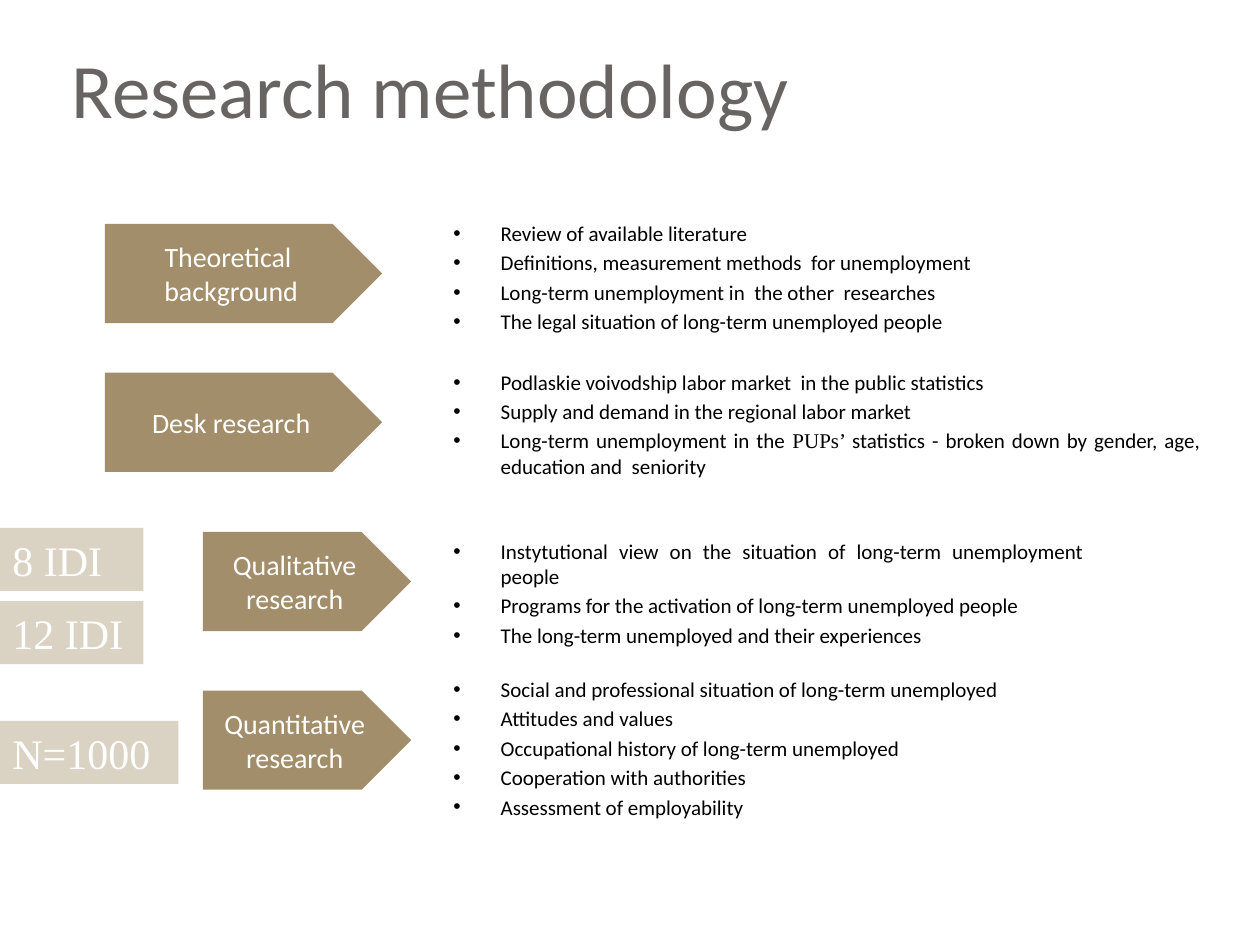
import dataclasses

import pptx
import pptx.dml.color
import pptx.enum.shapes
import pptx.enum.text
import pptx.oxml
import pptx.oxml.ns
import pptx.util

Pt = pptx.util.Pt
Shape = pptx.enum.shapes.MSO_SHAPE
Align = pptx.enum.text.PP_ALIGN
Anchor = pptx.enum.text.MSO_ANCHOR

HEX = {"title": "696464", "text": "000000", "light": "FFFFFF",
       "arrow": "A28E6A", "tag": "DAD2C3"}
SANS, SERIF = "Calibri", "Times New Roman"
SERIF_WORD = "PUPs’ "
LIST_LEFT, INDENT = 252, 27
ARROW_HIGH, TAG_HIGH = 56.7, 36


@dataclasses.dataclass
class Stage:
    label: str
    left: float
    top: float
    width: float
    list_top: float
    list_width: float
    list_high: float
    points: list[str]


@dataclasses.dataclass
class Tag:
    text: str
    top: float
    width: float


STAGES = [
    Stage("Theoretical \nbackground", 60, 128, 158.4, 122.4, 436, 80, [
        "Review of available literature",
        "Definitions, measurement methods  for unemployment",
        "Long-term unemployment in  the other  researches",
        "The legal situation of long-term unemployed people"]),
    Stage("Desk research", 60, 213, 158.4, 207.4, 445, 68, [
        "Podlaskie voivodship labor market  in the public statistics",
        "Supply and demand in the regional labor market",
        "Long-term unemployment in the PUPs’ statistics - broken down "
        "by gender, age,  education and  seniority"]),
    Stage("Qualitative research", 116, 304, 119, 304, 374.4, 63, [
        "Instytutional view on the situation of long-term unemployment people",
        "Programs for the activation of long-term unemployed people",
        "The long-term unemployed and their experiences"]),
    Stage("Quantitative research", 116, 394.6, 119, 383, 442, 91, [
        "Social and professional situation of long-term unemployed",
        "Attitudes and values",
        "Occupational history of long-term unemployed",
        "Cooperation with authorities",
        "Assessment of employability"]),
]
TAGS = [Tag("8 IDI", 301.7, 82), Tag("12 IDI", 343.6, 82),
        Tag("N=1000", 412, 102)]


def style(font, face: str, size: float, tone: str) -> None:
    font.name, font.size = face, Pt(size)
    font.color.rgb = pptx.dml.color.RGBColor.from_string(HEX[tone])


def fill_text(frame, text: str, face: str, size: float, tone: str,
              align, anchor) -> None:
    frame.word_wrap = True
    frame.vertical_anchor = anchor
    frame.text = text
    for para in frame.paragraphs:
        para.alignment = align
        for run in para.runs:
            style(run.font, face, size, tone)


def add_box(slide, kind, left: float, top: float, width: float,
            high: float, tone: str):
    shape = slide.shapes.add_shape(kind, Pt(left), Pt(top), Pt(width), Pt(high))
    shape.shadow.inherit = False
    shape.fill.solid()
    shape.fill.fore_color.rgb = pptx.dml.color.RGBColor.from_string(HEX[tone])
    shape.line.fill.background()
    return shape.text_frame


def add_bullet(para) -> None:
    props = para._p.get_or_add_pPr()
    props.set("marL", str(Pt(INDENT)))
    props.set("indent", str(-Pt(INDENT)))
    space = pptx.oxml.ns.nsdecls("a")
    for part in ('a:buFont {} typeface="Arial"', 'a:buChar {} char="•"'):
        props.append(pptx.oxml.parse_xml(f"<{part.format(space)}/>"))


def add_list(slide, stage: Stage) -> None:
    box = slide.shapes.add_textbox(Pt(LIST_LEFT), Pt(stage.list_top),
                                   Pt(stage.list_width), Pt(stage.list_high))
    frame = box.text_frame
    frame.word_wrap = True
    for num, point in enumerate(stage.points):
        para = frame.add_paragraph() if num else frame.paragraphs[0]
        add_bullet(para)
        para.alignment = Align.JUSTIFY
        para.space_before = Pt(2.4 if num else 0)
        for part in filter(None, point.partition(SERIF_WORD)):
            run = para.add_run()
            run.text = part
            style(run.font, SERIF if part == SERIF_WORD else SANS, 12, "text")


def add_stage(slide, stage: Stage) -> None:
    """Draw the arrow label and the bullet list beside it."""
    frame = add_box(slide, Shape.PENTAGON, stage.left, stage.top,
                    stage.width, ARROW_HIGH, "arrow")
    fill_text(frame, stage.label, SANS, 16, "light", Align.CENTER, Anchor.MIDDLE)
    add_list(slide, stage)


def add_tag(slide, tag: Tag) -> None:
    frame = add_box(slide, Shape.RECTANGLE, 0, tag.top, tag.width,
                    TAG_HIGH, "tag")
    fill_text(frame, tag.text, SERIF, 24, "light", Align.LEFT, Anchor.TOP)


def main() -> None:
    deck = pptx.Presentation()
    deck.slide_width, deck.slide_height = Pt(720), Pt(540)
    slide = deck.slides.add_slide(deck.slide_layouts[6])
    title = slide.shapes.add_textbox(Pt(0), Pt(0), Pt(502), Pt(100))
    fill_text(title.text_frame, "Research methodology ", SANS, 44, "title",
              Align.CENTER, Anchor.MIDDLE)
    for stage in STAGES:
        add_stage(slide, stage)
    for tag in TAGS:
        add_tag(slide, tag)
    deck.save("out.pptx")


if __name__ == "__main__":
    main()
